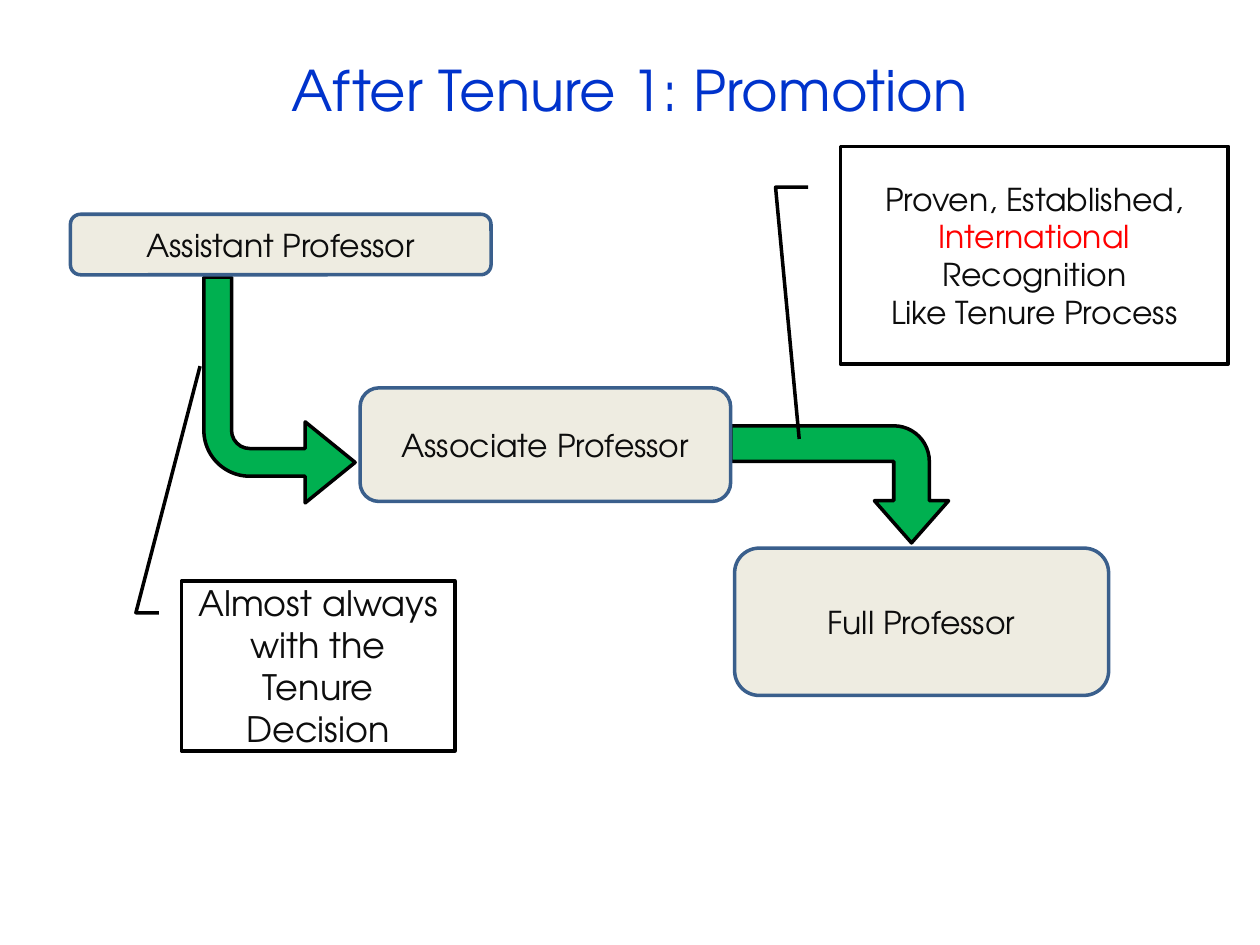
from pptx import Presentation
from pptx.dml.color import RGBColor
from pptx.enum.shapes import MSO_SHAPE
from pptx.enum.text import MSO_ANCHOR, PP_ALIGN
from pptx.oxml.ns import qn
from pptx.util import Cm, Pt

FONT = "TeX Gyre Adventor"
BLUE = RGBColor(0x00, 0x33, 0xCC)
EDGE = RGBColor(0x3A, 0x5F, 0x8C)
CREAM = RGBColor(0xEE, 0xEC, 0xE1)
GREEN = RGBColor(0x00, 0xB0, 0x50)
BLACK = RGBColor(0x00, 0x00, 0x00)
INK = RGBColor(0x0D, 0x0D, 0x0D)
RED = RGBColor(0xFF, 0x00, 0x00)


def style(frame, size, color):
    """Centre the text both ways and format all its runs."""
    frame.word_wrap = True
    frame.vertical_anchor = MSO_ANCHOR.MIDDLE
    for para in frame.paragraphs:
        para.alignment = PP_ALIGN.CENTER
        for run in para.runs:
            run.font.name = FONT
            run.font.size = Pt(size)
            run.font.color.rgb = color


def draw(kind, box, fill, line, adjust=()):
    """Add a shape; box is left, top, width, height in cm."""
    shape = slide.shapes.add_shape(kind, *map(Cm, box))
    shape.shadow.inherit = False
    if fill is None:
        shape.fill.background()
    else:
        shape.fill.solid()
        shape.fill.fore_color.rgb = fill
    shape.line.color.rgb = line
    shape.line.width = Pt(2)
    for i, value in enumerate(adjust):
        shape.adjustments[i] = value
    return shape


prs = Presentation()
prs.slide_width, prs.slide_height = Cm(25.4), Cm(19.05)
slide = prs.slides.add_slide(prs.slide_layouts[5])

title = slide.shapes.title
title.left, title.top, title.width, title.height = map(Cm, (1.27, 0.76, 22.86, 2.08))
title.text_frame.text = "After Tenure 1: Promotion"
style(title.text_frame, 32, BLUE)

# Bent arrows between the ranks: box, rotation, flips, adjustments
arrows = [
    ((4.11, 5.59, 3.05, 4.55), 0, ["flipV"], (0.183, 0.268, 0.33, 0.304)),
    ((15.75, 7.57, 2.36, 4.39), 270, ["flipH", "flipV"], (0.304, 0.317, 0.36, 0.304)),
]
for box, turn, flips, adjust in arrows:
    arrow = draw(MSO_SHAPE.BENT_ARROW, box, GREEN, BLACK, adjust)
    arrow.rotation = turn
    for flip in flips:
        arrow.element.spPr.find(qn("a:xfrm")).set(flip, "1")

ranks = [
    ("Assistant Professor", (1.42, 4.32, 8.48, 1.22)),
    ("Full Professor", (14.81, 11.05, 7.54, 2.97)),
    ("Associate Professor", (7.26, 7.82, 7.47, 2.29)),
]
for name, box in ranks:
    rank = draw(MSO_SHAPE.ROUNDED_RECTANGLE, box, CREAM, EDGE)
    rank.text_frame.text = name
    style(rank.text_frame, 18, INK)

# Both callouts share the bend; only the tip of the leader differs
BEND = (0.188, -0.083, 0.188, -0.167)
note = draw(MSO_SHAPE.LINE_CALLOUT_2, (3.66, 11.71, 5.51, 3.43), None, BLACK,
            BEND + (-1.262, 0.068))
note.text_frame.text = "Almost always with the Tenure Decision"
style(note.text_frame, 20, INK)

proof = draw(MSO_SHAPE.LINE_CALLOUT_2, (16.94, 2.95, 7.82, 4.39), None, BLACK,
             BEND + (1.344, -0.106))
frame = proof.text_frame
frame.text = "Proven, Established, \nLike Tenure Process"
first = frame.paragraphs[0]
for word in ("International ", "Recognition"):
    first.add_run().text = word
style(frame, 18, INK)
first.runs[1].font.color.rgb = RED

prs.save("out.pptx")
